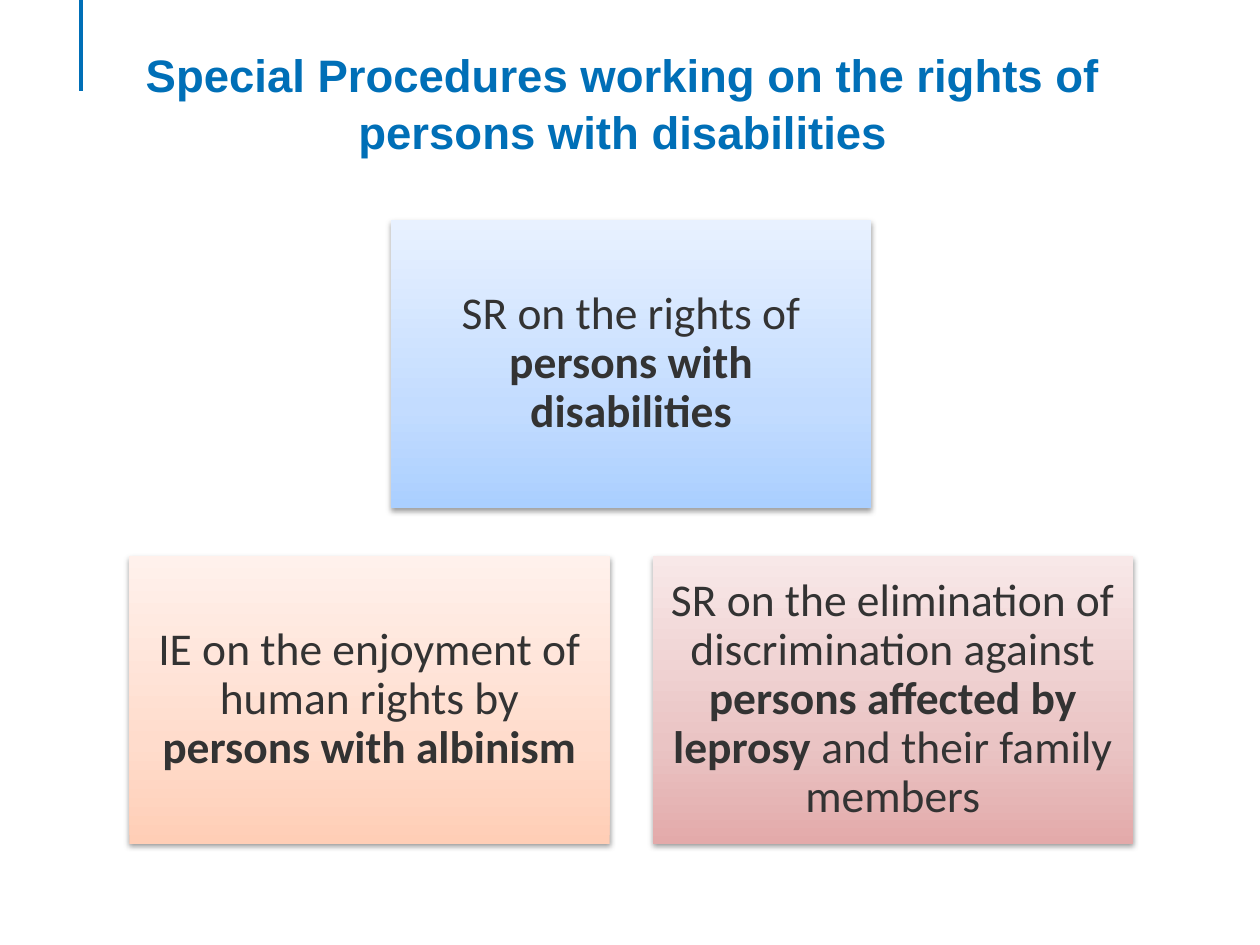
from copy import deepcopy

from lxml import etree
from pptx import Presentation
from pptx.dml.color import RGBColor
from pptx.enum.shapes import MSO_CONNECTOR, MSO_SHAPE
from pptx.enum.text import MSO_ANCHOR, PP_ALIGN
from pptx.oxml import parse_xml
from pptx.oxml.ns import nsdecls, qn
from pptx.util import Cm, Pt

RECT = MSO_SHAPE.RECTANGLE
STRAIGHT = MSO_CONNECTOR.STRAIGHT
TOP, MIDDLE = MSO_ANCHOR.TOP, MSO_ANCHOR.MIDDLE
CENTER = PP_ALIGN.CENTER

BLUE = RGBColor(0x00, 0x6F, 0xB7)
INK = RGBColor(0x33, 0x33, 0x33)
SKY = [RGBColor(0xAA, 0xCF, 0xFF), RGBColor(0xC3, 0xDC, 0xFF), RGBColor(0xE8, 0xF1, 0xFF)]
PEACH = [RGBColor(0xFF, 0xCE, 0xB6), RGBColor(0xFF, 0xDC, 0xCC), RGBColor(0xFF, 0xF1, 0xEC)]
ROSE = [RGBColor(0xE3, 0xAA, 0xAA), RGBColor(0xEA, 0xC4, 0xC4), RGBColor(0xF8, 0xE8, 0xE8)]
STOPS = [0, 0.35, 1]

CARD_W, CARD_H = 9.68, 5.8
GAP_X, GAP_Y = 0.87, 0.97
LEFT, TOP_ROW = 2.61, 4.44
RIGHT = LEFT + CARD_W + GAP_X
CENTRE = (LEFT + RIGHT) / 2
BOTTOM_ROW = TOP_ROW + CARD_H + GAP_Y

SHADOW = (
    f'<a:outerShdw {nsdecls("a")} blurRad="40000" dist="20000" dir="5400000" rotWithShape="0">'
    '<a:srgbClr val="000000"><a:alpha val="38000"/></a:srgbClr></a:outerShdw>'
)


class Deck:
    size = Pt(26)
    title_font = "Arial"
    card_font = "Calibri"

    def __init__(self, slide):
        self.slide = slide

    def rule(self, x, y1, y2):
        line = self.slide.shapes.add_connector(STRAIGHT, Cm(x), Cm(y1), Cm(x), Cm(y2))
        line.line.color.rgb = BLUE
        line.line.width = Pt(2)
        etree.SubElement(line._element.spPr, qn("a:effectLst"))

    def title(self, text, x, y, w, h):
        sp = self.slide.shapes.title
        sp.left, sp.top, sp.width, sp.height = Cm(x), Cm(y), Cm(w), Cm(h)
        tf = sp.text_frame
        tf.text = text
        tf.vertical_anchor = TOP
        p = tf.paragraphs[0]
        p.alignment = CENTER
        p.line_spacing = 1.05
        self.style(p, self.title_font, BLUE)
        p.font.bold = True

    def style(self, p, font, color):
        p.font.name = font
        p.font.size = self.size
        p.font.color.rgb = color

    def card(self, x, y, colors, runs):
        sp = self.slide.shapes.add_shape(RECT, Cm(x), Cm(y), Cm(CARD_W), Cm(CARD_H))
        sp.line.fill.background()
        self.gradient(sp, colors)
        sp.shadow.inherit = False
        sp._element.spPr.find(qn("a:effectLst")).append(parse_xml(SHADOW))
        tf = sp.text_frame
        tf.word_wrap = True
        tf.vertical_anchor = MIDDLE
        tf.margin_left = tf.margin_right = tf.margin_top = tf.margin_bottom = Cm(0.28)
        p = tf.paragraphs[0]
        p.alignment = CENTER
        p.line_spacing = 0.9
        self.style(p, self.card_font, INK)
        for text, bold in runs:
            r = p.add_run()
            r.text = text
            r.font.bold = bold

    def gradient(self, sp, colors):
        sp.fill.gradient()
        sp.fill.gradient_angle = 90
        stop_list = sp._element.spPr.find(".//" + qn("a:gsLst"))
        stop_list.append(deepcopy(stop_list[0]))
        for stop, position, color in zip(sp.fill.gradient_stops, STOPS, colors):
            stop.position = position
            stop.color.rgb = color


def main():
    prs = Presentation()
    prs.slide_width, prs.slide_height = Cm(25.4), Cm(19.05)
    s = Deck(prs.slides.add_slide(prs.slide_layouts[5]))
    s.rule(1.63, 0, 1.83)
    s.title("Special Procedures working on the rights of persons with disabilities",
            2.06, 0.76, 21, 3.02)
    s.card(CENTRE, TOP_ROW, SKY, [
        ("SR on the rights of ", False), ("persons with disabilities", True)])
    s.card(LEFT, BOTTOM_ROW, PEACH, [
        ("IE on the enjoyment of human rights by ", False), ("persons with albinism", True)])
    s.card(RIGHT, BOTTOM_ROW, ROSE, [
        ("SR on the elimination of discrimination against ", False),
        ("persons affected by leprosy ", True),
        ("and their family members", False)])
    prs.save("out.pptx")


if __name__ == "__main__":
    main()
